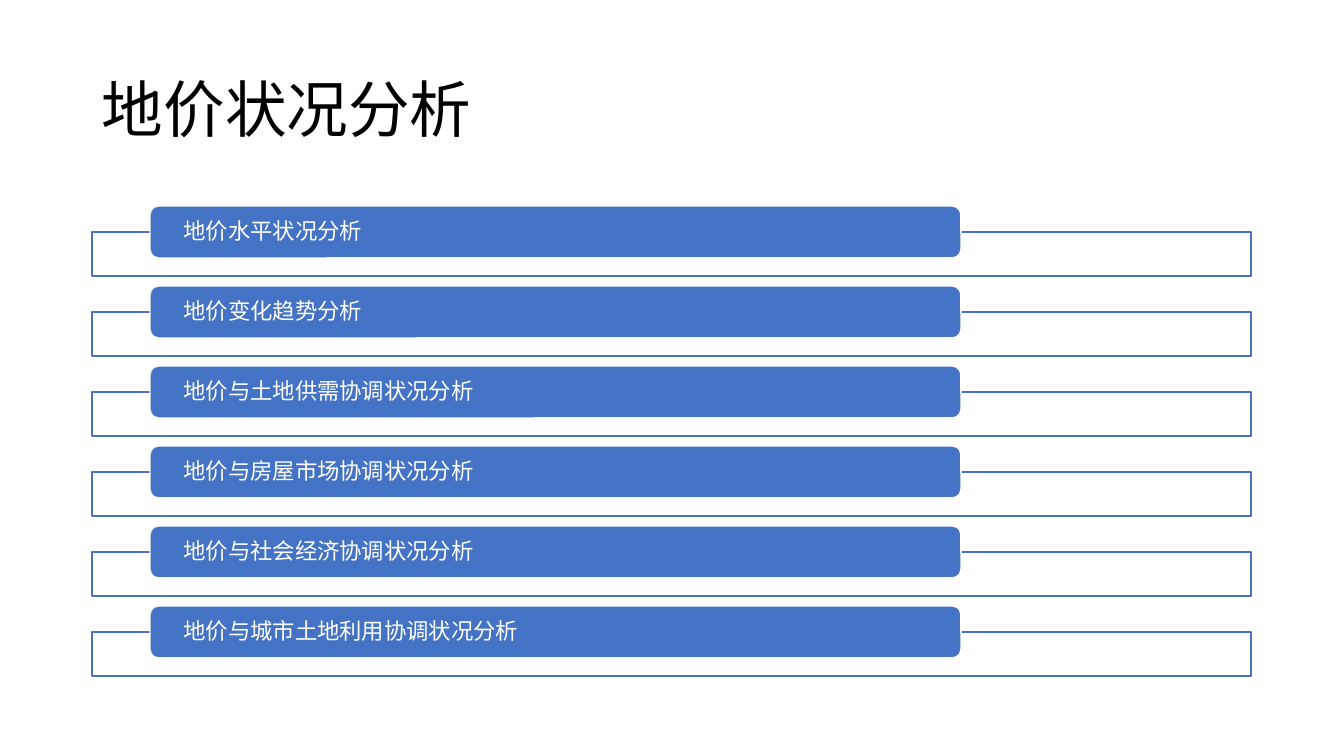
from pptx import Presentation
from pptx import util as u
from pptx.dml.color import RGBColor
from pptx.enum import shapes, text
from pptx.oxml.ns import qn

THEME = {
    "font": "Noto Sans CJK SC",
    "title_size": 44,
    "topic_size": 16,
    "black": RGBColor.from_string("000000"),
    "white": RGBColor.from_string("FFFFFF"),
    "blue": RGBColor.from_string("4472C4"),
}
EMU_PER_PX = 914400 / 100.8


def px(*lengths):
    return [round(length * EMU_PER_PX) for length in lengths]


def write(frame, words, size, color):
    frame.text = words
    frame.word_wrap = True
    frame.vertical_anchor = text.MSO_ANCHOR.MIDDLE
    paragraph = frame.paragraphs[0]
    paragraph.alignment = text.PP_ALIGN.LEFT
    paragraph.line_spacing = 0.9
    font = paragraph.runs[0].font
    font.name = THEME["font"]
    font.size = u.Pt(size)
    font.color.rgb = color
    # East Asian typeface
    east_asian = font._element.makeelement(qn("a:ea"), {"typeface": THEME["font"]})
    font._element.find(qn("a:latin")).addnext(east_asian)


deck = Presentation()
deck.slide_width, deck.slide_height = px(1344, 756)
slide = deck.slides.add_slide(deck.slide_layouts[6])

# Title
title = slide.shapes.add_textbox(*px(92, 40, 1159, 146))
write(title.text_frame, "地价状况分析", THEME["title_size"], THEME["black"])

# Topic list: an outlined frame with a label bar over its top edge
topics = [
    "地价水平状况分析",
    "地价变化趋势分析",
    "地价与土地供需协调状况分析",
    "地价与房屋市场协调状况分析",
    "地价与社会经济协调状况分析",
    "地价与城市土地利用协调状况分析",
]
FIRST_TOP, PITCH = 206, 80
for index, topic in enumerate(topics):
    top = FIRST_TOP + index * PITCH
    outline = slide.shapes.add_shape(
        shapes.MSO_SHAPE.RECTANGLE, *px(92, top + 26, 1159, 44))
    label = slide.shapes.add_shape(
        shapes.MSO_SHAPE.ROUNDED_RECTANGLE, *px(150, top, 811, 52))
    for part, fill, line in (
        (outline, THEME["white"], THEME["blue"]),
        (label, THEME["blue"], THEME["white"]),
    ):
        part.shadow.inherit = False
        part.fill.solid()
        part.fill.fore_color.rgb = fill
        part.line.color.rgb = line
        part.line.width = u.Pt(1)
    frame = label.text_frame
    frame.margin_left, frame.margin_right = px(31, 31)
    frame.margin_top = frame.margin_bottom = 0
    write(frame, topic, THEME["topic_size"], THEME["white"])

deck.save("out.pptx")
